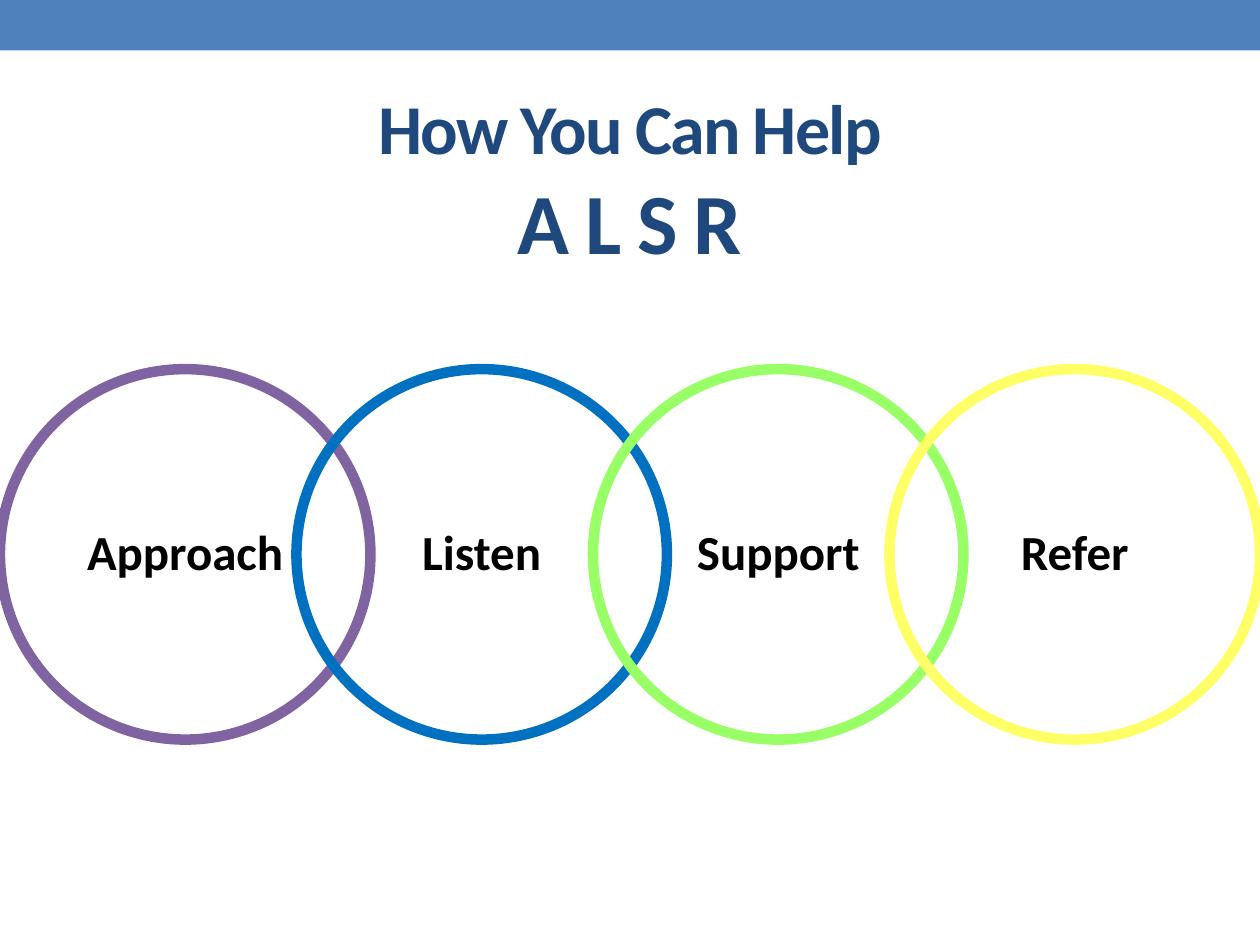
from pptx import Presentation
from pptx.dml.color import RGBColor
from pptx.enum.shapes import MSO_SHAPE as Shape
from pptx.enum.text import MSO_ANCHOR as Anchor, MSO_AUTO_SIZE as AutoSize, PP_ALIGN as Align
from pptx.util import Inches, Pt

FONT = "Calibri"
BAR_BLUE = RGBColor(0x4F, 0x81, 0xBD)
NAVY = RGBColor(0x1F, 0x49, 0x7D)
BLACK = RGBColor(0x00, 0x00, 0x00)
WHITE = RGBColor(0xFF, 0xFF, 0xFF)
PURPLE = RGBColor(0x80, 0x64, 0xA2)
BLUE = RGBColor(0x00, 0x70, 0xC0)
GREEN = RGBColor(0x99, 0xFF, 0x66)
YELLOW = RGBColor(0xFF, 0xFF, 0x66)
STEPS = [("Approach", PURPLE), ("Listen", BLUE), ("Support", GREEN), ("Refer", YELLOW)]


def add_text(paragraph, text, size, color, bold=True, tracking=0):
    """Append a formatted run to a centred paragraph."""
    paragraph.alignment = Align.CENTER
    run = paragraph.add_run()
    run.text = text
    run.font.name = FONT
    run.font.size = Pt(size)
    run.font.bold = bold
    run.font.color.rgb = color
    if tracking:
        run.font._element.set("spc", str(tracking * 100))


def add_top_bar(slide, left, top, width, height):
    """Draw the solid band along the top edge."""
    bar = slide.shapes.add_shape(Shape.RECTANGLE, left, top, width, height)
    bar.shadow.inherit = False
    bar.fill.solid()
    bar.fill.fore_color.rgb = BAR_BLUE
    bar.line.fill.background()


def fill_title(slide, left, top, width, height):
    """Place the two-line title in the title placeholder."""
    title = slide.shapes.title
    title.left, title.top, title.width, title.height = left, top, width, height
    frame = title.text_frame
    frame.auto_size = AutoSize.NONE
    frame.vertical_anchor = Anchor.MIDDLE
    paragraph = frame.paragraphs[0]
    add_text(paragraph, "How You Can Help", 40, NAVY, tracking=-1)
    paragraph.add_line_break()
    add_text(paragraph, "A L S R", 49, NAVY, tracking=-1)


def add_ring(slide, left, top, diameter, label, color):
    """Draw one outlined circle with its label in the middle."""
    ring = slide.shapes.add_shape(Shape.OVAL, left, top, diameter, diameter)
    ring.shadow.inherit = False
    ring.fill.background()
    ring.line.color.rgb = color
    ring.line.width = Pt(6)
    frame = ring.text_frame
    frame.margin_left = frame.margin_right = frame.margin_top = frame.margin_bottom = 0
    frame.word_wrap = True
    frame.vertical_anchor = Anchor.MIDDLE
    paragraph = frame.paragraphs[0]
    paragraph.line_spacing = 0.9
    add_text(paragraph, label, 28, BLACK)
    return ring


def add_ring_chain(slide, left, top, width, diameter):
    """Spread overlapping rings evenly across the width."""
    step = (width - diameter) / (len(STEPS) - 1)
    rings = [
        add_ring(slide, round(left + index * step), top, diameter, label, color)
        for index, (label, color) in enumerate(STEPS)
    ]
    rings[0].fill.solid()
    rings[0].fill.fore_color.rgb = WHITE


def main():
    """Build and save the slide."""
    presentation = Presentation()
    presentation.slide_width = Inches(10)
    presentation.slide_height = Inches(7.5)
    slide = presentation.slides.add_slide(presentation.slide_layouts[5])
    add_top_bar(slide, 0, 0, presentation.slide_width, Inches(0.4))
    fill_title(slide, Inches(0.5), Inches(0.58), Inches(9), Inches(1.67))
    add_ring_chain(slide, 0, Inches(2.93), presentation.slide_width, Inches(2.94))
    presentation.save("out.pptx")


if __name__ == "__main__":
    main()
